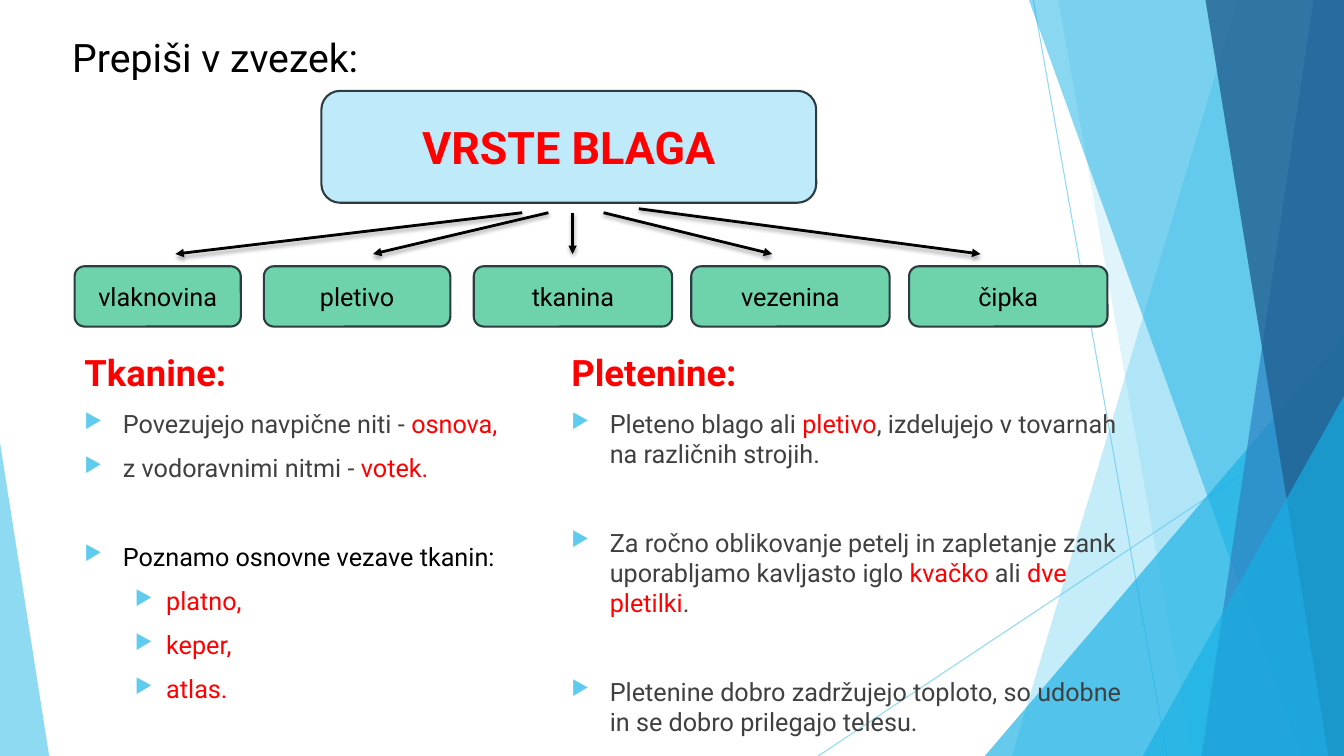
from dataclasses import dataclass

from lxml import etree
from pptx import Presentation
from pptx import util as u
from pptx.dml import color
from pptx.enum import shapes, text
from pptx.oxml import ns

FONT = "Roboto"
WIDE, HIGH = 33.87, 19.05
HUES = {
    "sky": "5FCBEF", "cyan": "17B0E4", "blue": "2E83C3", "navy": "226292",
    "pale": "BFEAF9", "mint": "6ED2AA", "edge": "2C3C43",
    "red": "FF0000", "grey": "404040", "black": "000000",
}


@dataclass
class Band:
    """A strip running to the right edge, from its top x to its foot x."""
    top: float
    foot: float
    hue: str
    alpha: int


@dataclass
class Wedge:
    """A right-angled triangle standing on the slide's bottom edge."""
    x: float
    y: float
    w: float
    apex: float
    hue: str
    alpha: int


@dataclass
class Box:
    x: float
    y: float
    w: float
    h: float


@dataclass
class Run:
    words: str
    hue: str = "grey"
    size: int = 18
    bold: bool = False


@dataclass
class Line:
    runs: list[Run]
    gap: float = 10
    level: int = 0
    mark: bool = True


@dataclass
class Arrow:
    x: float
    y: float
    tip: float


DECOR = [
    Band(31.19, 25.5, "sky", 36),
    Band(26.67, 30.05, "sky", 20),
    Wedge(24.82, 8.46, 9.05, 1, "cyan", 66),
    Band(25.93, 32.79, "cyan", 50),
    Band(33.1, 30.28, "blue", 70),
    Band(30.38, 33.48, "navy", 80),
    Wedge(28.8, 9.98, 5.07, 1, "cyan", 66),
    Wedge(0, 11.15, 1.24, 0, "sky", 70),
]
RAYS = [(26.04, 0, 29.41, HIGH), (WIDE, 10.24, 20.62, HIGH)]
KINDS = [("vlaknovina", 1.88, 4.19), ("pletivo", 6.65, 4.7), ("tkanina", 11.94, 5),
         ("vezenina", 17.42, 5), ("čipka", 22.91, 5)]
ARROWS = [Arrow(13.16, 5.36, 4.42), Arrow(13.82, 5.36, 9.4), Arrow(14.43, 5.36, 14.43),
          Arrow(15.21, 5.36, 19.46), Arrow(16.1, 5.26, 24.71)]

BREAK = 41.6
WOVEN = [
    Line([Run("Tkanine:", "red", 26, True)], gap=0, mark=False),
    Line([Run("Povezujejo navpične niti - "), Run("osnova,", "red")]),
    Line([Run("z vodoravnimi nitmi - "), Run("votek.", "red")]),
    Line([Run("Poznamo osnovne vezave tkanin:", "black")], gap=BREAK),
    *(Line([Run(name, "red")], level=1) for name in ("platno,", "keper,", "atlas.")),
]
KNIT = [
    Line([Run("Pletenine:", "red", 26, True)], gap=0, mark=False),
    Line([Run("Pleteno blago ali "), Run("pletivo", "red"),
          Run(", izdelujejo v tovarnah na različnih strojih.")]),
    Line([Run("Za ročno oblikovanje petelj in zapletanje zank uporabljamo kavljasto iglo"),
          Run(" kvačko ", "red"), Run("ali "), Run("dve pletilki", "red"), Run(".")],
         gap=BREAK),
    Line([Run("Pletenine dobro zadržujejo toploto, so udobne in se dobro prilegajo telesu.")],
         gap=BREAK),
]


def rgb(hue: str) -> color.RGBColor:
    return color.RGBColor.from_string(HUES[hue])


def add_tag(parent, tag: str, **attrs):
    return etree.SubElement(parent, ns.qn(tag), {k: str(v) for k, v in attrs.items()})


def fade(shape, alpha: int) -> None:
    for node in shape.element.iter(ns.qn("a:srgbClr")):
        add_tag(node, "a:alpha", val=alpha * 1000)


def add_run(para, run: Run) -> None:
    part = para.add_run()
    part.text = run.words
    part.font.name = FONT
    part.font.size = u.Pt(run.size)
    part.font.bold = run.bold
    part.font.color.rgb = rgb(run.hue)


def add_mark(para, level: int) -> None:
    """Give a paragraph its triangle bullet and hanging indent."""
    left, hang = [(0.97, 0.97), (2.06, 0.79)][level]
    props = para._p.get_or_add_pPr()
    props.set("marL", str(u.Cm(left)))
    props.set("indent", str(-u.Cm(hang)))
    add_tag(add_tag(props, "a:buClr"), "a:srgbClr", val=HUES["sky"])
    add_tag(props, "a:buSzPct", val=80000)
    add_tag(props, "a:buChar", char="▶")


def add_text(slide, box: Box, lines: list[Line]) -> None:
    frame = slide.shapes.add_textbox(*map(u.Cm, (box.x, box.y, box.w, box.h))).text_frame
    frame.word_wrap = True
    for i, line in enumerate(lines):
        para = frame.add_paragraph() if i else frame.paragraphs[0]
        if line.mark:
            add_mark(para, line.level)
        para.level = line.level
        para.space_before = u.Pt(line.gap)
        for run in line.runs:
            add_run(para, run)


def add_decor(slide, item: Band | Wedge) -> None:
    if isinstance(item, Band):
        pen = slide.shapes.build_freeform(u.Cm(item.top), 0)
        corners = [(WIDE, 0), (WIDE, HIGH), (item.foot, HIGH)]
        pen.add_line_segments([(u.Cm(x), u.Cm(y)) for x, y in corners])
        shape = pen.convert_to_shape()
    else:
        shape = slide.shapes.add_shape(
            shapes.MSO_SHAPE.ISOSCELES_TRIANGLE,
            *map(u.Cm, (item.x, item.y, item.w, HIGH - item.y)))
        shape.adjustments[0] = item.apex
    shape.shadow.inherit = False
    shape.line.fill.background()
    shape.fill.solid()
    shape.fill.fore_color.rgb = rgb(item.hue)
    fade(shape, item.alpha)


def add_card(slide, box: Box, fill: str, run: Run) -> None:
    card = slide.shapes.add_shape(shapes.MSO_SHAPE.ROUNDED_RECTANGLE,
                                  *map(u.Cm, (box.x, box.y, box.w, box.h)))
    card.shadow.inherit = False
    card.fill.solid()
    card.fill.fore_color.rgb = rgb(fill)
    card.line.color.rgb = rgb("edge")
    card.line.width = u.Pt(1.5)
    card.text_frame.vertical_anchor = text.MSO_ANCHOR.MIDDLE
    para = card.text_frame.paragraphs[0]
    para.alignment = text.PP_ALIGN.CENTER
    add_run(para, run)


def add_line(slide, ends: tuple, hue: str, width: float):
    """Draw a straight line and return it with its empty effect list."""
    line = slide.shapes.add_connector(shapes.MSO_CONNECTOR.STRAIGHT, *map(u.Cm, ends))
    line.line.color.rgb = rgb(hue)
    line.line.width = u.Pt(width)
    return line, add_tag(line.element.spPr, "a:effectLst")


def add_arrow(slide, arrow: Arrow) -> None:
    line, effect = add_line(slide, (arrow.x, arrow.y, arrow.tip, 6.4), "black", 2)
    add_tag(line.line._get_or_add_ln(), "a:tailEnd", type="triangle")
    shade = add_tag(effect, "a:outerShdw", blurRad=u.Pt(3), dist=u.Pt(2),
                    dir=90 * 60000, rotWithShape=0)
    add_tag(add_tag(shade, "a:srgbClr", val=HUES["black"]), "a:alpha", val=35000)


def main() -> None:
    deck = Presentation()
    deck.slide_width, deck.slide_height = u.Cm(WIDE), u.Cm(HIGH)
    slide = deck.slides.add_slide(deck.slide_layouts[6])
    for ends in RAYS:
        ray, _ = add_line(slide, ends, "sky", 0.75)
        fade(ray, 70)
    for item in DECOR:
        add_decor(slide, item)
    add_text(slide, Box(1.57, 0.71, 23.88, 3.66),
             [Line([Run("Prepiši v zvezek:", "black", 28)], gap=0, mark=False)])
    add_text(slide, Box(1.88, 8.71, 11.63, 9.35), WOVEN)
    add_text(slide, Box(14.15, 8.71, 14.83, 9.35), KNIT)
    add_card(slide, Box(8.1, 2.29, 12.47, 2.82), "pale", Run("VRSTE BLAGA", "red", 32, True))
    for name, x, w in KINDS:
        add_card(slide, Box(x, 6.71, w, 1.52), "mint", Run(name, "black"))
    for arrow in ARROWS:
        add_arrow(slide, arrow)
    deck.save("out.pptx")


if __name__ == "__main__":
    main()
